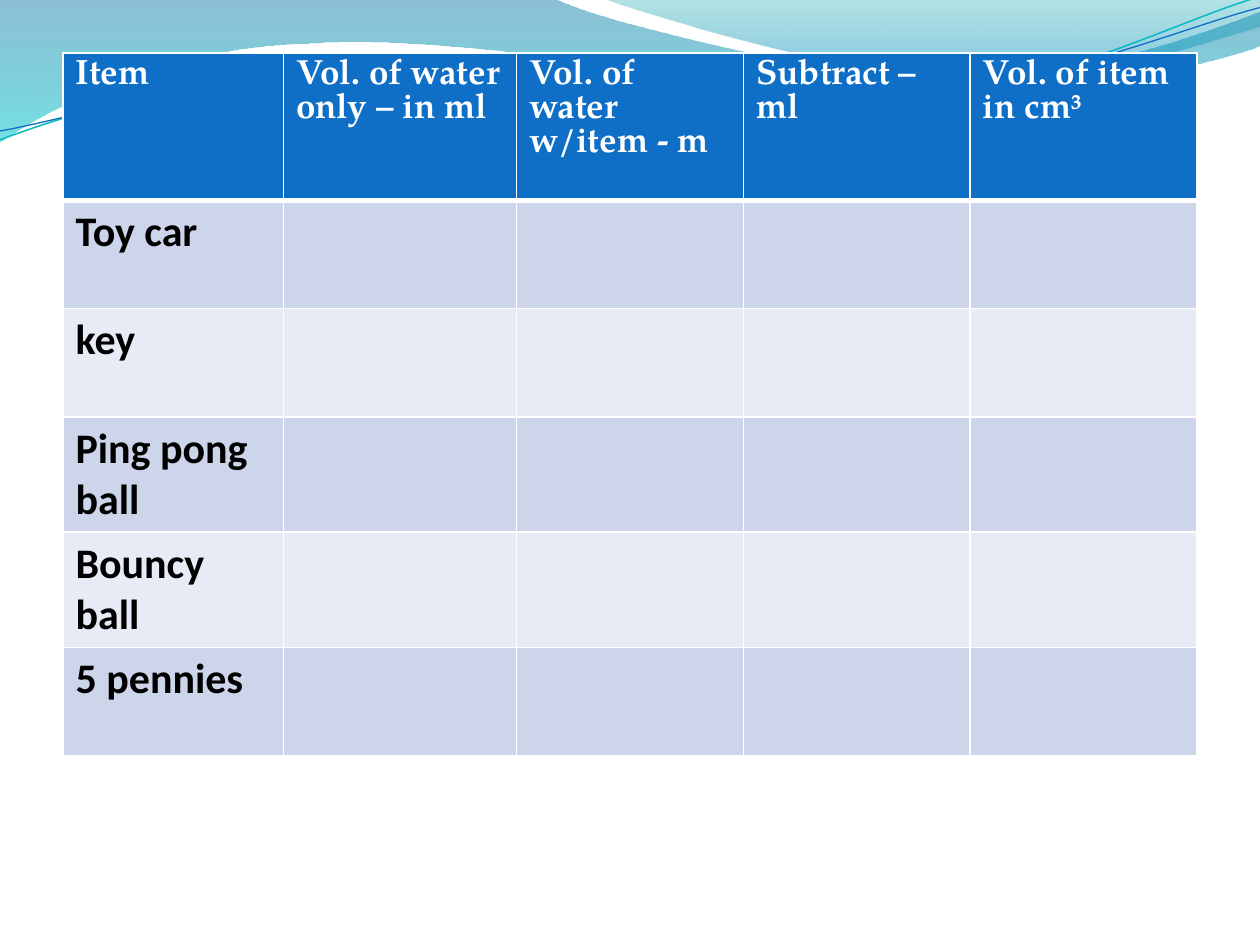
"""Build a slide with a volume table below a wave banner."""
from math import cos, radians, sin
from lxml.etree import SubElement
from pptx import Presentation
from pptx.dml.color import RGBColor
from pptx.oxml import parse_xml
from pptx.oxml.ns import nsdecls, qn
from pptx.util import Inches, Pt

WHITE, BLUE = "FFFFFF", "0F6FC6"
BANDS = ("CCD5EA", "E7EBF5")
HEADS = ("Item", "Vol. of water only – in ml", "Vol. of water w/item - m",
         "Subtract – ml", "Vol. of item in cm³")
ITEMS = ("Toy car", "key", "Ping pong ball", "Bouncy ball", "5 pennies")
WIDTHS = (1.75, 1.85, 1.8, 1.8, 1.8)
TILT = 2.7

WAVES = (
    (((0, 0), (4.4, -0.01),
      (4.76, 0.17, 6.64, 0.63, 7.58, 0.63),
      (8.53, 0.63, 9.58, 0.26, 10, 0.09), (10.01, 0.36),
      (9.83, 0.44, 8.7, 0.76, 7.46, 0.75),
      (6.22, 0.75, 3.82, 0.28, 2.57, 0.34),
      (1.29, 0.36, 0.46, 0.83, -0.01, 1.13), (0, 0)),
     ((0, "0074A1", 45), (1, "00C6CF", 55))),
    (((4.79, -0.01),
      (5.09, 0.11, 6.82, 0.62, 7.69, 0.65),
      (8.56, 0.69, 9.61, 0.32, 10, 0.21), (10, 0), (4.79, -0.01)),
     ((0, "00A1A9", 30), (0.8, "008BBF", 45))),
)
STROKES = (
    (((0, 1.11),
      (0.48, 0.93, 1.58, 0.57, 2.77, 0.52),
      (3.95, 0.47, 5.93, 0.89, 7.13, 0.8),
      (8.33, 0.71, 9.38, 0.15, 9.98, -0.02)), "0AB8BF", 0.85),
    (((0, 1.04),
      (0.47, 0.96, 1.64, 0.61, 2.83, 0.56),
      (4.03, 0.51, 5.97, 0.84, 7.17, 0.75),
      (8.36, 0.67, 9.41, 0.21, 10, 0.06)), BLUE, 0.75),
)


def tint(text):
    """Turn a hex string into a colour."""
    return RGBColor.from_string(text)


def pairs(part):
    """Split flat numbers into points."""
    return list(zip(part[::2], part[1::2]))


def turn(part, angle, mid=(4.99, 0.575)):
    """Turn the points of a part clockwise about a middle."""
    c, s = cos(radians(angle)), sin(radians(angle))
    flat = []
    for x, y in pairs(part):
        dx, dy = x - mid[0], y - mid[1]
        flat += [mid[0] + dx * c - dy * s, mid[1] + dx * s + dy * c]
    return flat


def add_curve(slide, parts, close=False):
    """Add an outline of straight lines and cubic curves."""
    ends = [(Inches(x), Inches(y)) for x, y in (p[-2:] for p in parts)]
    pen = slide.shapes.build_freeform(*ends[0])
    pen.add_line_segments(ends[1:], close=close)
    shape = pen.convert_to_shape()
    shape.shadow.inherit = False
    lines = list(shape._element.iter(qn("a:lnTo")))
    for line, part in zip(lines, parts[1:]):
        if len(part) == 6:
            line.addprevious(bend(part, shape.left, shape.top))
            line.getparent().remove(line)
    return shape


def bend(part, left, top):
    """Make one cubic curve, measured from the shape's corner."""
    points = "".join(f'<a:pt x="{Inches(x) - left}" y="{Inches(y) - top}"/>'
                     for x, y in pairs(part))
    return parse_xml(f'<a:cubicBezTo {nsdecls("a")}>{points}</a:cubicBezTo>')


def add_wave(slide, parts, stops):
    """Add a closed wave with a clear gradient from top to bottom."""
    shape = add_curve(slide, parts, close=True)
    shape.line.fill.background()
    shape.fill.gradient()
    shape.fill.gradient_angle = 270
    for stop, (place, color, alpha) in zip(shape.fill.gradient_stops, stops):
        stop.position = place
        stop.color.rgb = tint(color)
    marks = shape._element.spPr.iter(qn("a:srgbClr"))
    for mark, (place, color, alpha) in zip(marks, stops):
        SubElement(mark, qn("a:alpha"), val=str(alpha * 1000))


def add_stroke(slide, parts, color, width):
    """Add an open thin curve with a slight tilt."""
    shape = add_curve(slide, [turn(part, TILT) for part in parts])
    shape.rotation = 360 - TILT
    shape.fill.background()
    shape.line.color.rgb = tint(color)
    shape.line.width = Pt(width)


def put_text(cell, text, size=24, font="Calibri", color="000000", bold=True):
    """Write formatted text into a cell."""
    run = cell.text_frame.paragraphs[0].add_run()
    run.text = text
    run.font.size, run.font.name, run.font.bold = Pt(size), font, bold
    run.font.color.rgb = tint(color)


def set_cell(cell, color, top=1, base=1):
    """Fill a cell and give it white borders."""
    cell.fill.solid()
    cell.fill.fore_color.rgb = tint(color)
    sides = (("L", 1), ("R", 1), ("T", top), ("B", base))
    for place, (side, width) in enumerate(sides):
        cell._tc.tcPr.insert(place, parse_xml(
            f'<a:ln{side} {nsdecls("a")} w="{Pt(width)}"><a:solidFill>'
            f'<a:srgbClr val="{WHITE}"/></a:solidFill></a:ln{side}>'))


def add_grid(slide):
    """Add the table with its heads and items."""
    frame = slide.shapes.add_table(
        len(ITEMS) + 1, len(HEADS), Inches(0.5), Inches(0.42),
        Inches(9), Inches(5.47))
    table = frame.table
    for column, width in zip(table.columns, WIDTHS):
        column.width = Inches(width)
    for index, row in enumerate(table.rows):
        row.height = Inches(0.86 if index else 1.17)
        for cell in row.cells:
            if index:
                set_cell(cell, BANDS[(index - 1) % 2],
                         top=3 if index == 1 else 1)
            else:
                set_cell(cell, BLUE, base=3)
    for column, head in enumerate(HEADS):
        put_text(table.cell(0, column), head, size=20,
                 font="TeX Gyre Pagella", color=WHITE)
    for index, item in enumerate(ITEMS, 1):
        put_text(table.cell(index, 0), item)


def main():
    """Build and save the slide."""
    deck = Presentation()
    deck.slide_width, deck.slide_height = Inches(10), Inches(7.5)
    slide = deck.slides.add_slide(deck.slide_layouts[6])
    for wave in WAVES:
        add_wave(slide, *wave)
    for stroke in STROKES:
        add_stroke(slide, *stroke)
    add_grid(slide)
    deck.save("out.pptx")


if __name__ == "__main__":
    main()
